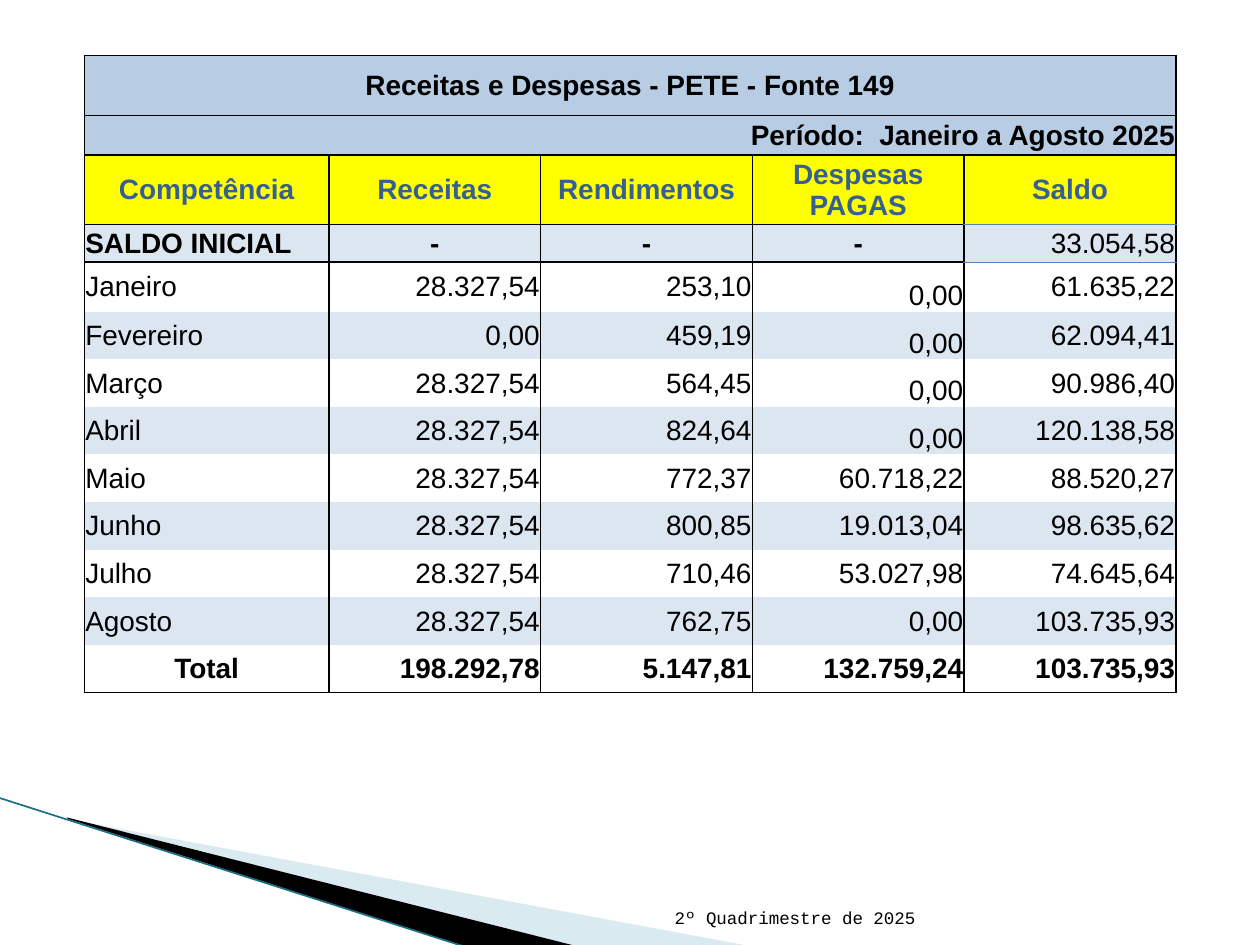
from lxml.etree import SubElement
from pptx import Presentation
from pptx.dml.color import RGBColor
from pptx.enum.text import MSO_ANCHOR, PP_ALIGN
from pptx.oxml.ns import qn
from pptx.util import Cm, Pt

# Content
TITLE = "Receitas e Despesas - PETE - Fonte 149"
PERIOD = "Período:  Janeiro a Agosto 2025"
HEADINGS = ["Competência", "Receitas", "Rendimentos", "Despesas PAGAS", "Saldo"]
OPENING = ["SALDO INICIAL", "-", "-", "-", "33.054,58"]
MONTHS = [
    ["Janeiro", "28.327,54", "253,10", "0,00", "61.635,22"],
    ["Fevereiro", "0,00", "459,19", "0,00", "62.094,41"],
    ["Março", "28.327,54", "564,45", "0,00", "90.986,40"],
    ["Abril", "28.327,54", "824,64", "0,00", "120.138,58"],
    ["Maio", "28.327,54", "772,37", "60.718,22", "88.520,27"],
    ["Junho", "28.327,54", "800,85", "19.013,04", "98.635,62"],
    ["Julho", "28.327,54", "710,46", "53.027,98", "74.645,64"],
    ["Agosto", "28.327,54", "762,75", "0,00", "103.735,93"],
]
TOTAL = ["Total", "198.292,78", "5.147,81", "132.759,24", "103.735,93"]
FOOTER = "2º Quadrimestre de 2025"

# Layout in centimetres
COLUMN_WIDTHS = [4.93] + [4.27] * 4
ROW_HEIGHTS = [1.21, 0.79, 1.41, 0.75, 1.0] + [0.96] * 8
WEDGES = [
    ([(1.4, 16.52), (15.11, 19.07), (11.58, 19.07), (1.4, 16.51)], "A0CBDC", 40),
    ([(1.35, 16.48), (11.61, 19.07), (9.45, 19.1), (1.37, 16.51)], "000000", 100),
]
NO_STYLE = "{2D5ABB26-0587-4C30-8999-92F81FD0307C}"
LEFT, CENTER, RIGHT = PP_ALIGN.LEFT, PP_ALIGN.CENTER, PP_ALIGN.RIGHT
BLACK_EDGE = ("000000", 1)
BLUE_EDGE = ("4F81BD", 0.5)


def color(value):
    return RGBColor.from_string(value)


def write(frame, text, size=16, font="Arial", ink="000000", bold=False, align=LEFT):
    paragraph = frame.paragraphs[0]
    paragraph.alignment = align
    run = paragraph.add_run()
    run.text = text
    run.font.size = Pt(size)
    run.font.name = font
    run.font.bold = bold
    run.font.color.rgb = color(ink)


def set_borders(cell, edges):
    properties = cell._tc.get_or_add_tcPr()
    for side in "LRTB":
        if side in edges:
            ink, width = edges[side]
            line = SubElement(properties, qn(f"a:ln{side}"), w=str(Pt(width)))
            fill = SubElement(line, qn("a:solidFill"))
            SubElement(fill, qn("a:srgbClr"), val=ink)


def style_cell(cell, fill, edges, anchor=MSO_ANCHOR.MIDDLE):
    set_borders(cell, edges)
    cell.margin_left = cell.margin_right = cell.margin_top = Cm(0.02)
    cell.margin_bottom = 0
    cell.vertical_anchor = anchor
    if fill:
        cell.fill.solid()
        cell.fill.fore_color.rgb = color(fill)
    else:
        cell.fill.background()


def add_wedge(slide, points, fill, opacity):
    corners = [(Cm(x), Cm(y)) for x, y in points]
    builder = slide.shapes.build_freeform(*corners[0])
    builder.add_line_segments(corners[1:], close=True)
    shape = builder.convert_to_shape()
    shape.shadow.inherit = False
    shape.line.fill.background()
    shape.fill.solid()
    shape.fill.fore_color.rgb = color(fill)
    if opacity < 100:
        tint = shape._element.spPr.find(".//" + qn("a:srgbClr"))
        SubElement(tint, qn("a:alpha"), val=str(opacity * 1000))


def add_corner(slide):
    for wedge in WEDGES:
        add_wedge(slide, *wedge)
    connector = slide.shapes.add_connector(1, Cm(-0.03), Cm(16.08), Cm(9.42), Cm(19.1))
    connector.line.color.rgb = color("1A6F85")
    connector.line.width = Pt(0.95)
    SubElement(connector._element.spPr, qn("a:effectLst"))


def add_footer(slide):
    box = slide.shapes.add_textbox(Cm(12.17), Cm(17.81), Cm(6.53), Cm(1.02))
    box.text_frame.word_wrap = True
    box.text_frame.vertical_anchor = MSO_ANCHOR.BOTTOM
    write(box.text_frame, FOOTER, size=10, font="Courier New", align=RIGHT)


def add_statement(slide):
    rows = [[TITLE] + [""] * 4, [PERIOD] + [""] * 4, HEADINGS, OPENING, *MONTHS, TOTAL]
    frame = slide.shapes.add_table(
        len(rows), len(HEADINGS), Cm(1.7), Cm(1.12),
        Cm(sum(COLUMN_WIDTHS)), Cm(sum(ROW_HEIGHTS)))
    table = frame.table
    table.first_row = table.horz_banding = False
    table._tbl.tblPr.find(qn("a:tableStyleId")).text = NO_STYLE
    for column, width in zip(table.columns, COLUMN_WIDTHS):
        column.width = Cm(width)
    for row, height in zip(table.rows, ROW_HEIGHTS):
        row.height = Cm(height)
    for index in (0, 1):
        table.cell(index, 0).merge(table.cell(index, 4))

    last = len(rows) - 1
    for r, values in enumerate(rows):
        for c, text in enumerate(values):
            fill = "DCE6F1" if r % 2 and r < last else None
            ink = "000000"
            bold = r < 3 or r == last or (r == 3 and c < 4)
            align = RIGHT if c else LEFT
            edges = {"L": BLACK_EDGE, "R": BLACK_EDGE}
            if r < 2:
                fill, align = "B8CCE4", (CENTER, RIGHT)[r]
            elif r == 2:
                fill, ink, align = "FFFF00", "366092", CENTER
            elif (r == 3 and 0 < c < 4) or (r == last and c == 0):
                align = CENTER
            if r < 4:
                edges["T"] = BLUE_EDGE if (r, c) == (3, 4) else BLACK_EDGE
            if r < 3 or r == last:
                edges["B"] = BLUE_EDGE if (r, c) == (2, 4) else BLACK_EDGE
            # Expenses sit low from January to April
            low = c == 3 and 4 <= r <= 7
            cell = table.cell(r, c)
            style_cell(cell, fill, edges, MSO_ANCHOR.BOTTOM if low else MSO_ANCHOR.MIDDLE)
            if text:
                write(cell.text_frame, text, ink=ink, bold=bold, align=align)


def main():
    presentation = Presentation()
    presentation.slide_width, presentation.slide_height = Cm(25.4), Cm(19.05)
    slide = presentation.slides.add_slide(presentation.slide_layouts[6])
    add_corner(slide)
    add_footer(slide)
    add_statement(slide)
    presentation.save("out.pptx")


if __name__ == "__main__":
    main()
